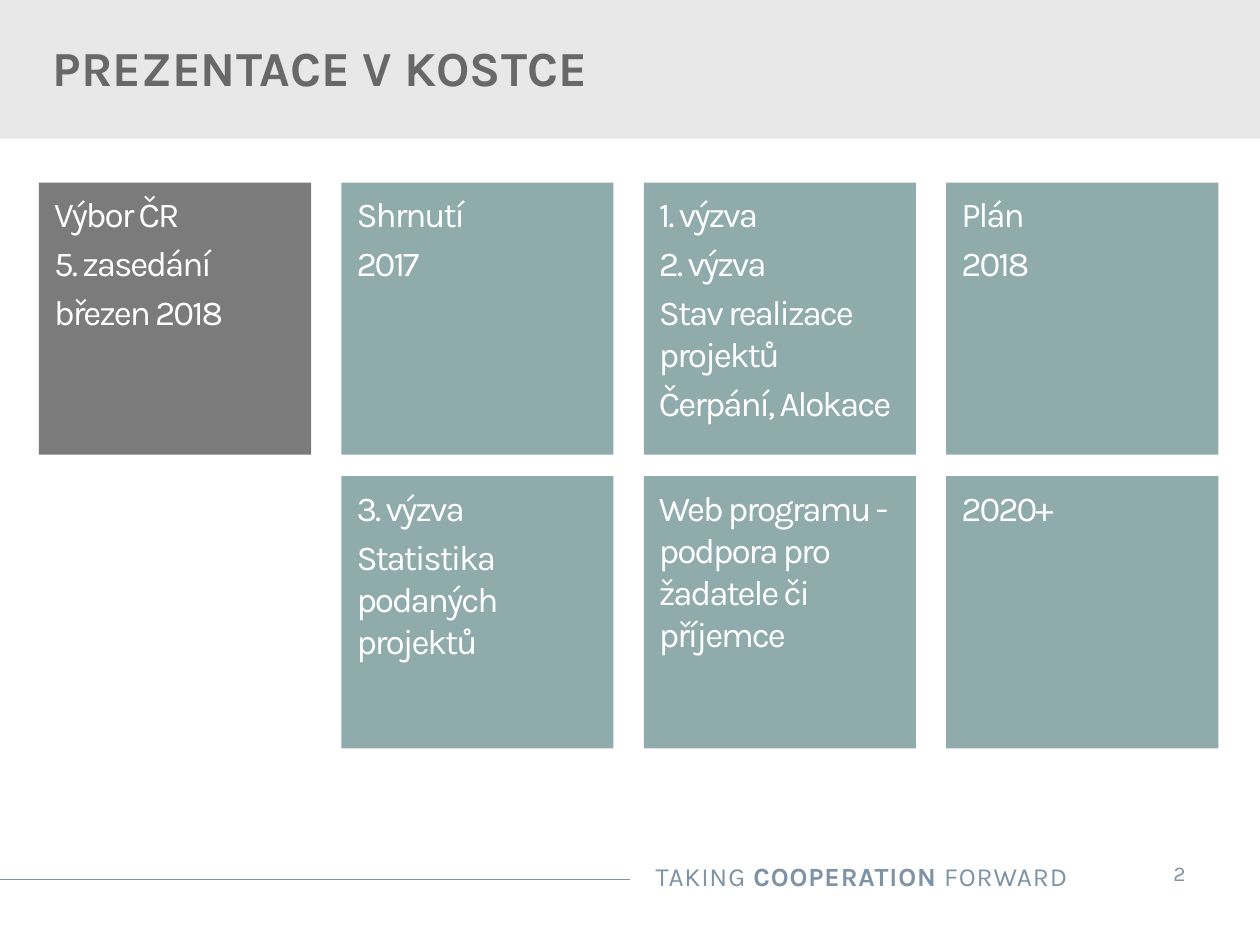
from lxml.etree import SubElement
from pptx import Presentation
from pptx.dml.color import RGBColor
from pptx.enum.shapes import MSO_CONNECTOR, MSO_SHAPE
from pptx.enum.text import MSO_ANCHOR, MSO_AUTO_SIZE, PP_ALIGN
from pptx.oxml.ns import qn
from pptx.util import Inches, Pt

WHITE = RGBColor(0xFF, 0xFF, 0xFF)
BAND_GREY = RGBColor(0xE8, 0xE8, 0xE8)
TITLE_GREY = RGBColor(0x68, 0x68, 0x68)
TILE_GREY = RGBColor(0x7B, 0x7B, 0x7B)
TILE_TEAL = RGBColor(0x90, 0xAB, 0xAB)
SLATE = RGBColor(0x7E, 0x93, 0xA5)

GRID_LEFT, GRID_TOP = 0.31, 1.45
COLUMN_STEP, ROW_STEP = 2.4, 2.33
TILE_SIZE = 2.16

TILES = [
    (0, 0, TILE_GREY, ["Výbor ČR", "5. zasedání", "březen 2018"]),
    (1, 0, TILE_TEAL, ["Shrnutí", "2017"]),
    (2, 0, TILE_TEAL, ["1. výzva", "2. výzva", "Stav realizace projektů", "Čerpání, Alokace"]),
    (3, 0, TILE_TEAL, ["Plán", "2018"]),
    (1, 1, TILE_TEAL, ["3. výzva", "Statistika podaných projektů"]),
    (2, 1, TILE_TEAL, ["Web programu - podpora pro žadatele či příjemce"]),
    (3, 1, TILE_TEAL, ["2020+"]),
]


def format_span(span, size, color, bold=False, spacing=0):
    span.font.name = "Karla"
    span.font.size = Pt(size)
    span.font.color.rgb = color
    span.font.bold = bold
    if spacing:
        span.font._element.set("spc", str(round(spacing * 100)))


def add_rectangle(page, left, top, width, height, color):
    box = page.shapes.add_shape(
        MSO_SHAPE.RECTANGLE, Inches(left), Inches(top), Inches(width), Inches(height)
    )
    box.shadow.inherit = False
    box.fill.solid()
    box.fill.fore_color.rgb = color
    box.line.fill.background()
    return box


deck = Presentation()
deck.slide_width, deck.slide_height = Inches(10), Inches(7.5)
page = deck.slides.add_slide(deck.slide_layouts.get_by_name("Title Only"))

rule = page.shapes.add_connector(
    MSO_CONNECTOR.STRAIGHT, 0, Inches(6.98), deck.slide_width // 2, Inches(6.98)
)
rule.line.color.rgb = SLATE
rule.line.width = Pt(0.75)
SubElement(rule.element.spPr, qn("a:effectLst"))

band = add_rectangle(page, 0, 0, 10, 1.1, BAND_GREY)

title = page.shapes.title
band.element.addnext(title.element)
title.left, title.top = Inches(0.08), Inches(0.16)
title.width, title.height = Inches(7.1), Inches(0.75)
frame = title.text_frame
frame.text = "PREZENTACE V KOSTCE"
frame.auto_size = MSO_AUTO_SIZE.NONE
frame.vertical_anchor = MSO_ANCHOR.MIDDLE
frame.margin_left = Inches(0.34)
frame.paragraphs[0].alignment = PP_ALIGN.LEFT
format_span(frame.paragraphs[0].runs[0], 28, TITLE_GREY, bold=True)

for column, row, color, lines in TILES:
    tile = add_rectangle(
        page,
        GRID_LEFT + column * COLUMN_STEP,
        GRID_TOP + row * ROW_STEP,
        TILE_SIZE,
        TILE_SIZE,
        color,
    )
    frame = tile.text_frame
    frame.text = "\n".join(lines)
    frame.word_wrap = True
    frame.vertical_anchor = MSO_ANCHOR.TOP
    frame.margin_left = frame.margin_right = frame.margin_bottom = Inches(0.12)
    frame.margin_top = Inches(0.08)
    for index, para in enumerate(frame.paragraphs):
        para.alignment = PP_ALIGN.LEFT
        para.space_before = Pt(4 if index else 0)
        format_span(para.runs[0], 20, WHITE, spacing=-1.2)

motto = page.shapes.add_textbox(Inches(3.88), Inches(6.78), Inches(4.69), Inches(0.35))
motto.text_frame.word_wrap = True
para = motto.text_frame.paragraphs[0]
para.alignment = PP_ALIGN.RIGHT
for text, bold in [("TAKING ", False), ("COOPERATION", True), (" FORWARD", False)]:
    span = para.add_run()
    span.text = text
    format_span(span, 15, SLATE, bold, spacing=0.5)

number = page.shapes.add_textbox(Inches(8.99), Inches(6.73), Inches(0.74), Inches(0.4))
frame = number.text_frame
frame.text = "2"
frame.margin_left = frame.margin_right = Inches(0.2)
frame.margin_top = frame.margin_bottom = Inches(0.1)
frame.paragraphs[0].alignment = PP_ALIGN.CENTER
format_span(frame.paragraphs[0].runs[0], 12, SLATE)

deck.save("out.pptx")
